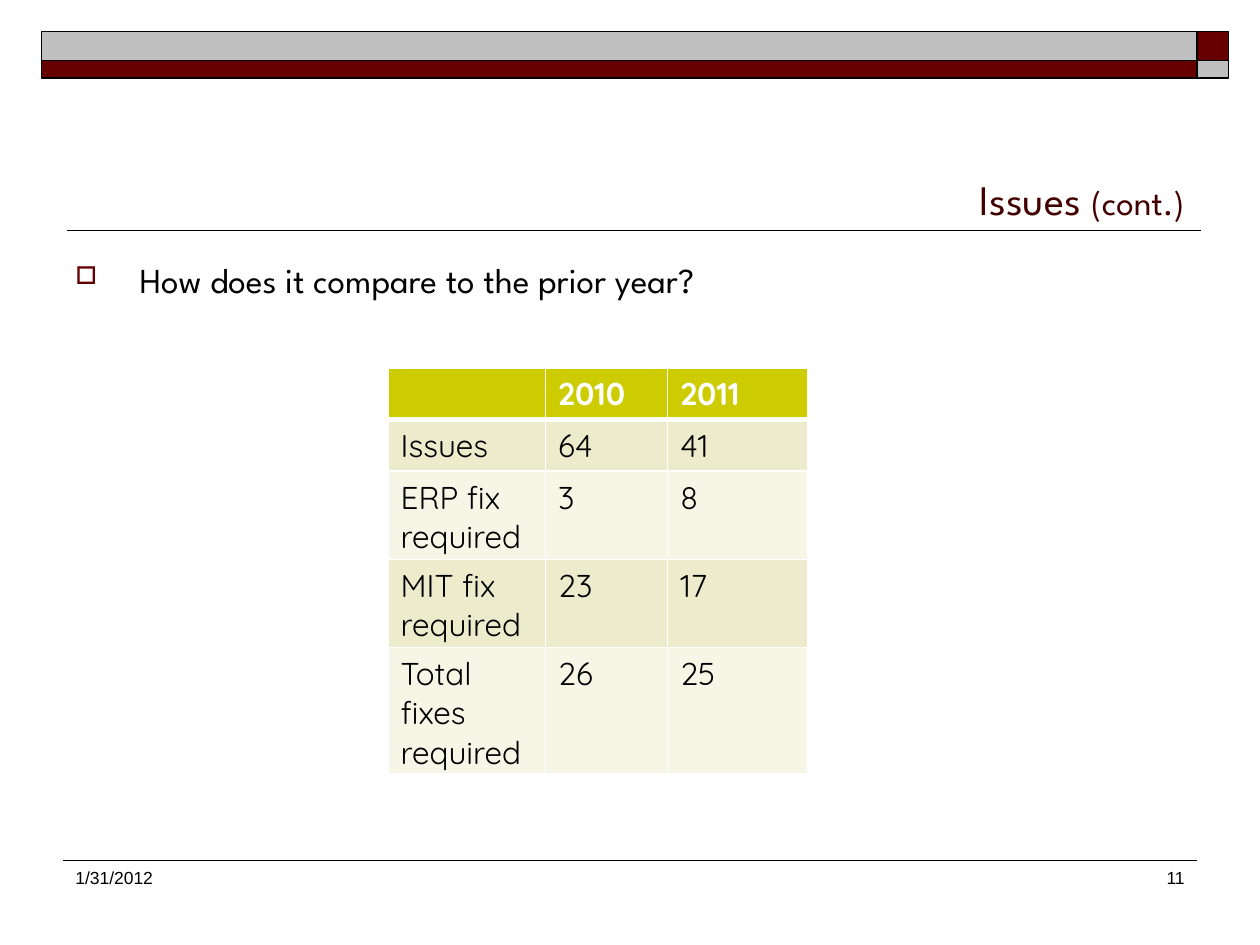
"""Build the slide that compares issues with the prior year."""
from dataclasses import dataclass

from lxml.etree import SubElement
from pptx import Presentation
from pptx.dml.color import RGBColor as Color
from pptx.enum.shapes import MSO_CONNECTOR as Connector, MSO_SHAPE as Shape
from pptx.enum.text import MSO_ANCHOR as Anchor, PP_ALIGN as Align
from pptx.oxml import parse_xml
from pptx.oxml.ns import nsdecls, qn
from pptx.slide import Slide
from pptx.table import _Cell as Cell
from pptx.text.text import Font, _Paragraph as Paragraph
from pptx.util import Inches, Pt


@dataclass(frozen=True)
class Theme:
    """Hold the fonts, type sizes and colours."""
    heading_font: str = "League Spartan"
    table_font: str = "Quicksand"
    footer_font: str = "Arial"
    title_size: float = 24
    body_size: float = 20
    table_size: float = 18
    footer_size: float = 10
    title: str = "420000"
    maroon: str = "660000"
    silver: str = "C0C0C0"
    black: str = "000000"
    white: str = "FFFFFF"
    header: str = "CCCC00"
    bands: tuple[str, str] = ("ECECCC", "F6F6E7")


@dataclass(frozen=True)
class Block:
    """Describe one block of the top band."""
    left: float
    top: float
    width: float
    height: float
    fill: str


@dataclass(frozen=True)
class Rule:
    """Describe one horizontal rule."""
    left: float
    top: float
    weight: float


@dataclass(frozen=True)
class Label:
    """Describe one text box and its sized pieces of text."""
    left: float
    top: float
    width: float
    height: float
    pieces: tuple[tuple[str, float], ...]
    font: str
    color: str
    align: Align = Align.LEFT
    anchor: Anchor = Anchor.TOP


THEME = Theme()
RULE_LENGTH = 9
BLOCKS = (
    Block(9.5, 0.25, 0.25, 0.23, THEME.maroon),
    Block(0.33, 0.25, 9.17, 0.23, THEME.silver),
    Block(0.33, 0.48, 9.17, 0.14, THEME.maroon),
    Block(9.5, 0.48, 0.25, 0.14, THEME.silver),
)
RULES = (Rule(0.53, 1.83, 1), Rule(0.5, 6.83, 0.75))
TITLE = Label(0.5, 0.58, 9, 1.25,
              (("Issues ", THEME.title_size), ("(cont.)", THEME.body_size)),
              THEME.heading_font, THEME.title, Align.RIGHT, Anchor.BOTTOM)
QUESTION = Label(0.5, 2, 9, 4.7,
                 (("How does it compare to the prior year?", THEME.body_size),),
                 THEME.heading_font, THEME.black)
DATE = Label(0.5, 6.83, 1.83, 0.5, (("1/31/2012", THEME.footer_size),),
             THEME.footer_font, THEME.black)
PAGE_NUMBER = Label(7.42, 6.83, 2.08, 0.5, (("11", THEME.footer_size),),
                    THEME.footer_font, THEME.black, Align.RIGHT)
COLUMN_WIDTHS = (1.25, 0.97, 1.11)
ROW_HEIGHTS = (0.41, 0.41, 0.7, 0.7, 1)
ROWS = (
    ("", "2010", "2011"),
    ("Issues", "64", "41"),
    ("ERP fix required", "3", "8"),
    ("MIT fix required", "23", "17"),
    ("Total fixes required", "26", "25"),
)


def style_font(font: Font, name: str, size: float, color: str, bold: bool = False) -> None:
    """Set the typeface, size, colour and weight of a font."""
    font.name = name
    font.size = Pt(size)
    font.bold = bold
    font.color.rgb = Color.from_string(color)


def draw_block(slide: Slide, block: Block) -> None:
    """Draw one outlined block of the top band."""
    shape = slide.shapes.add_shape(
        Shape.RECTANGLE, Inches(block.left), Inches(block.top),
        Inches(block.width), Inches(block.height))
    shape.shadow.inherit = False
    shape.fill.solid()
    shape.fill.fore_color.rgb = Color.from_string(block.fill)
    shape.line.color.rgb = Color.from_string(THEME.black)
    shape.line.width = Pt(1)


def draw_rule(slide: Slide, rule: Rule) -> None:
    """Draw one horizontal rule."""
    connector = slide.shapes.add_connector(
        Connector.STRAIGHT, Inches(rule.left), Inches(rule.top),
        Inches(rule.left + RULE_LENGTH), Inches(rule.top))
    connector.line.color.rgb = Color.from_string(THEME.black)
    connector.line.width = Pt(rule.weight)
    SubElement(connector._element.spPr, qn("a:effectLst"))


def draw_label(slide: Slide, label: Label) -> Paragraph:
    """Draw a text box and return its paragraph."""
    shape = slide.shapes.add_textbox(
        Inches(label.left), Inches(label.top),
        Inches(label.width), Inches(label.height))
    frame = shape.text_frame
    frame.word_wrap = True
    frame.vertical_anchor = label.anchor
    paragraph = frame.paragraphs[0]
    paragraph.alignment = label.align
    for text, size in label.pieces:
        run = paragraph.add_run()
        run.text = text
        style_font(run.font, label.font, size, label.color)
    return paragraph


def add_bullet(paragraph: Paragraph) -> None:
    """Give a paragraph a hanging square bullet."""
    properties = paragraph._p.get_or_add_pPr()
    properties.set("marL", str(Inches(0.51)))
    properties.set("indent", str(Inches(-0.51)))
    color = SubElement(properties, qn("a:buClr"))
    SubElement(color, qn("a:srgbClr"), val=THEME.maroon)
    SubElement(properties, qn("a:buSzPct"), val="70000")
    SubElement(properties, qn("a:buChar"), char="□")


def set_borders(cell: Cell, top: float, bottom: float) -> None:
    """Give a cell white borders, with the top and bottom weights in points."""
    properties = cell._tc.get_or_add_tcPr()
    weights = {"lnL": 1, "lnR": 1, "lnT": top, "lnB": bottom}
    for position, (side, weight) in enumerate(weights.items()):
        properties.insert(position, parse_xml(
            f'<a:{side} {nsdecls("a")} w="{Pt(weight)}"><a:solidFill>'
            f'<a:srgbClr val="{THEME.white}"/></a:solidFill></a:{side}>'))


def draw_table(slide: Slide) -> None:
    """Draw the table of issues and fixes by year."""
    table = slide.shapes.add_table(
        len(ROWS), len(COLUMN_WIDTHS), Inches(3.08), Inches(2.92),
        Inches(sum(COLUMN_WIDTHS)), Inches(sum(ROW_HEIGHTS))).table
    for column, width in zip(table.columns, COLUMN_WIDTHS):
        column.width = Inches(width)
    for index, (row, height, texts) in enumerate(zip(table.rows, ROW_HEIGHTS, ROWS)):
        row.height = Inches(height)
        is_header = index == 0
        fill = THEME.header if is_header else THEME.bands[(index - 1) % 2]
        color = THEME.white if is_header else THEME.black
        for cell, text in zip(row.cells, texts):
            cell.text = text
            cell.fill.solid()
            cell.fill.fore_color.rgb = Color.from_string(fill)
            set_borders(cell, 3 if index == 1 else 1, 3 if is_header else 1)
            for run in cell.text_frame.paragraphs[0].runs:
                style_font(run.font, THEME.table_font, THEME.table_size, color, is_header)


def main() -> None:
    """Build and save the presentation."""
    presentation = Presentation()
    presentation.slide_width = Inches(10)
    presentation.slide_height = Inches(7.5)
    slide = presentation.slides.add_slide(presentation.slide_layouts[6])
    for block in BLOCKS:
        draw_block(slide, block)
    for rule in RULES:
        draw_rule(slide, rule)
    draw_label(slide, TITLE)
    add_bullet(draw_label(slide, QUESTION))
    for label in (DATE, PAGE_NUMBER):
        draw_label(slide, label)
    draw_table(slide)
    presentation.save("out.pptx")


if __name__ == "__main__":
    main()
